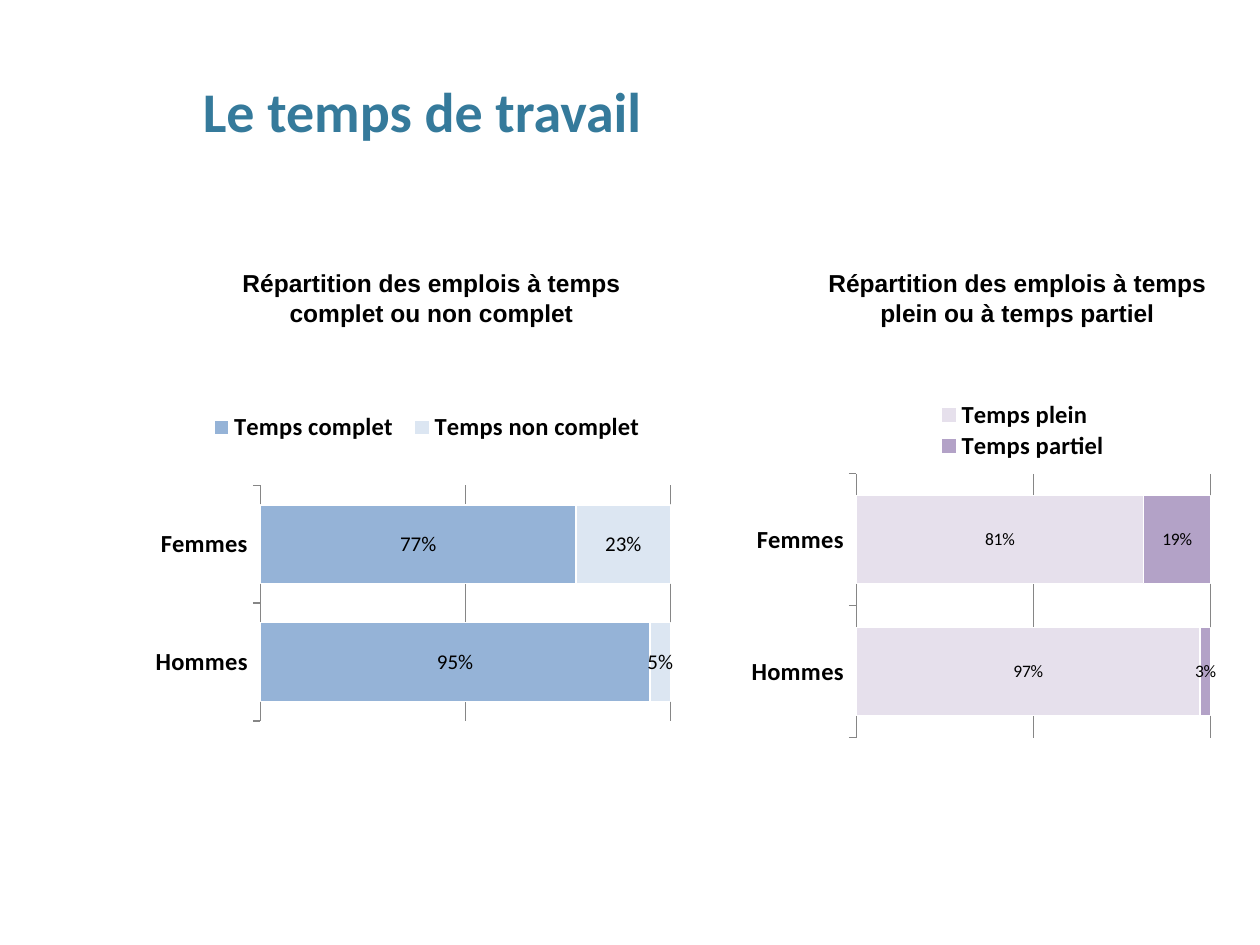
from dataclasses import dataclass

from lxml.etree import SubElement
from pptx import Presentation
from pptx.chart.data import CategoryChartData
from pptx.dml.color import RGBColor
from pptx.enum.chart import XL_CHART_TYPE, XL_LABEL_POSITION, XL_LEGEND_POSITION, XL_TICK_MARK
from pptx.enum.text import MSO_ANCHOR, PP_ALIGN
from pptx.oxml import parse_xml
from pptx.oxml.ns import nsdecls, qn
from pptx.util import Inches, Pt


@dataclass(frozen=True)
class Theme:
    title_color: str = "357A9B"
    text_color: str = "000000"
    edge_color: str = "FFFFFF"
    axis_color: str = "868686"
    full_time: tuple = ("95B3D7", "DCE6F2")
    part_time: tuple = ("E6E0EC", "B3A2C7")
    body_font: str = "Calibri"
    heading_font: str = "Arial"
    title_size: int = 32
    heading_size: int = 14
    axis_size: int = 14
    base_size: int = 10


THEME = Theme()


def style_font(font, size, color=THEME.text_color, name=THEME.body_font, bold=False):
    font.size = Pt(size)
    font.bold = bold
    font.name = name
    font.color.rgb = RGBColor.from_string(color)


def add_text(slide, text, box, align=PP_ALIGN.LEFT, anchor=MSO_ANCHOR.TOP, inset=None, **font):
    sp = slide.shapes.add_textbox(*map(Inches, box))
    tf = sp.text_frame
    tf.word_wrap = True
    tf.vertical_anchor = anchor
    if inset is not None:
        tf.margin_left = tf.margin_top = tf.margin_right = tf.margin_bottom = Inches(inset)
    p = tf.paragraphs[0]
    p.alignment = align
    r = p.add_run()
    r.text = text
    style_font(r.font, **font)


def set_layout(parent, index, area, inner=False):
    for old in parent.findall(qn("c:layout")):
        parent.remove(old)
    layout = parse_xml(f"<c:layout {nsdecls('c')}><c:manualLayout/></c:layout>")
    values = [("xMode", "edge"), ("yMode", "edge"), *zip("xywh", area)]
    if inner:
        values.insert(0, ("layoutTarget", "inner"))
    for tag, value in values:
        SubElement(layout[0], qn(f"c:{tag}"), val=str(value))
    parent.insert(index, layout)


def style_line(line, color):
    line.color.rgb = RGBColor.from_string(color)
    line.width = Pt(0.75)


def style_axes(chart, number_format):
    cat = chart.category_axis
    cat.major_tick_mark = XL_TICK_MARK.OUTSIDE
    cat.has_major_gridlines = False
    style_font(cat.tick_labels.font, THEME.axis_size, bold=True)
    style_line(cat.format.line, THEME.axis_color)
    val = chart.value_axis
    val.minimum_scale, val.maximum_scale, val.major_unit = 0, 1, 0.5
    val.has_major_gridlines = True
    style_line(val.major_gridlines.format.line, THEME.axis_color)
    val.tick_labels.number_format = number_format
    val.tick_labels.number_format_is_linked = False
    val.visible = False


def style_series(series, color, label_size):
    series.format.fill.solid()
    series.format.fill.fore_color.rgb = RGBColor.from_string(color)
    style_line(series.format.line, THEME.edge_color)
    labels = series.data_labels
    labels.show_value = True
    labels.position = XL_LABEL_POSITION.CENTER
    labels.number_format = r"0%;\–0%;;@"
    labels.number_format_is_linked = False
    style_font(labels.font, label_size)


def add_share_chart(slide, box, series, colors, label_size, plot_area, legend_area, axis_format):
    data = CategoryChartData(number_format="0%")
    data.categories = ["Hommes", "Femmes"]
    for name, values in series.items():
        data.add_series(name, values)
    chart = slide.shapes.add_chart(XL_CHART_TYPE.BAR_STACKED_100, *map(Inches, box), data).chart
    style_font(chart.font, THEME.base_size)
    chart.has_title = False
    chart.has_legend = True
    legend = chart.legend
    legend.position = XL_LEGEND_POSITION.RIGHT
    legend.include_in_layout = False
    style_font(legend.font, THEME.axis_size, bold=True)
    style_axes(chart, axis_format)
    plot = chart.plots[0]
    plot.gap_width, plot.overlap = 50, 100
    plot.vary_by_categories = False
    for item, color in zip(plot.series, colors):
        style_series(item, color, label_size)
    set_layout(chart._chartSpace.chart.plotArea, 0, plot_area, inner=True)
    set_layout(legend._element, 1, legend_area)


def main():
    prs = Presentation()
    prs.slide_width, prs.slide_height = Inches(10), Inches(7.5)
    s = prs.slides.add_slide(prs.slide_layouts[6])
    add_text(s, "Le temps de travail", (1.61, 0.6, 7.64, 0.55), anchor=MSO_ANCHOR.MIDDLE,
             inset=0, size=THEME.title_size, color=THEME.title_color, bold=True)
    headings = [
        (1.77, "Répartition des emplois à temps complet ou non complet"),
        (6.42, "Répartition des emplois à temps plein ou à temps partiel"),
    ]
    for left, text in headings:
        add_text(s, text, (left, 2.08, 3.31, 0.57), align=PP_ALIGN.CENTER,
                 size=THEME.heading_size, name=THEME.heading_font, bold=True)
    add_share_chart(
        s, (0.98, 2.96, 4.72, 2.79),
        {"Temps complet": (0.95, 0.77), "Temps non complet": (0.05, 0.23)},
        THEME.full_time, label_size=12, plot_area=(0.23, 0.32, 0.69, 0.67),
        legend_area=(0.13, 0.1, 0.76, 0.11), axis_format="0%")
    add_share_chart(
        s, (5.67, 2.73, 4.33, 3.13),
        {"Temps plein": (0.97, 0.81), "Temps partiel": (0.03, 0.19)},
        THEME.part_time, label_size=10, plot_area=(0.26, 0.33, 0.65, 0.67),
        legend_area=(0.4, 0.14, 0.33, 0.16), axis_format="0.00%")
    prs.save("out.pptx")


if __name__ == "__main__":
    main()
